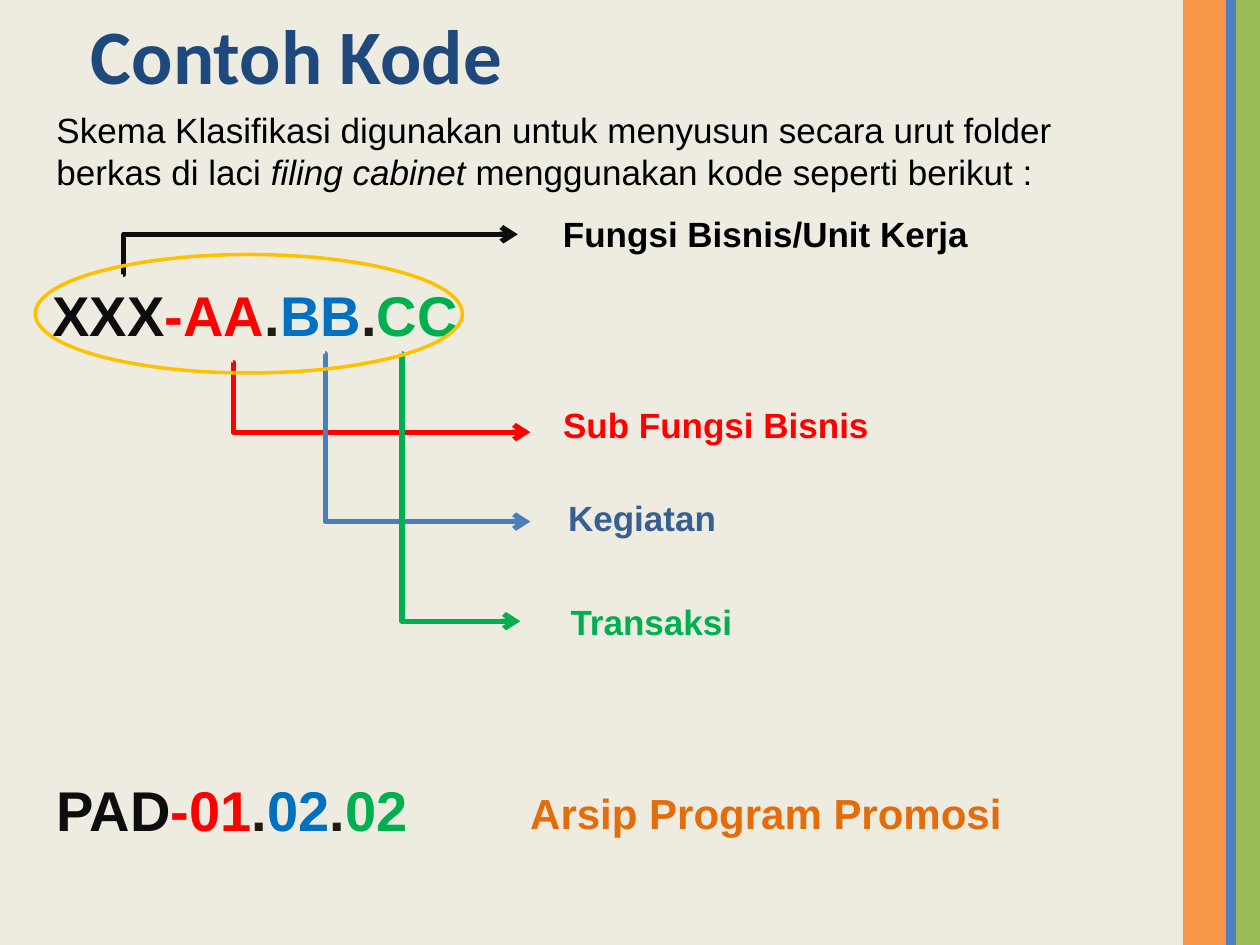
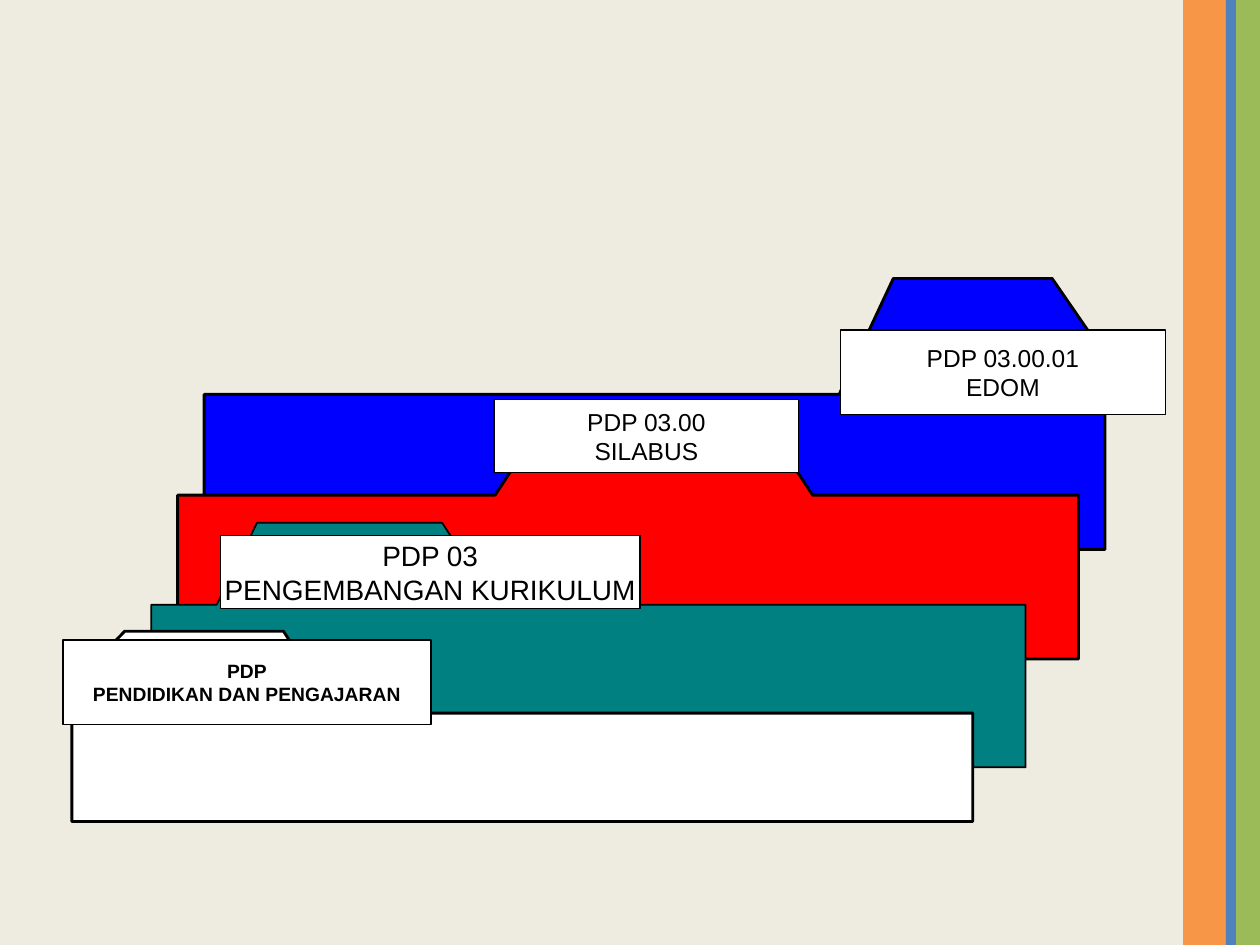
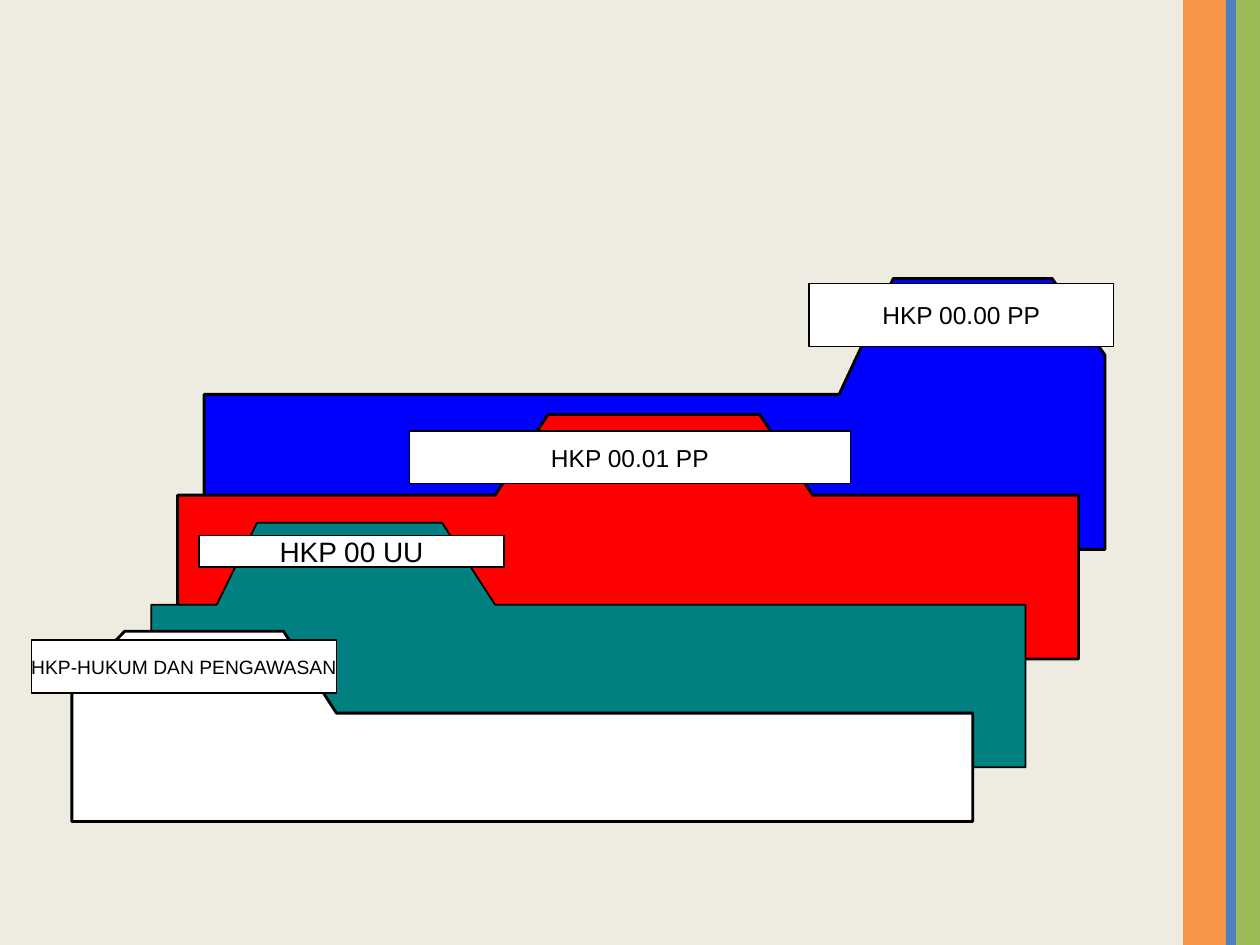
"""Build three slides that explain filing codes and folder order."""
from lxml import etree
from pptx import Presentation
from pptx.dml.color import RGBColor
from pptx.enum.shapes import MSO_CONNECTOR, MSO_SHAPE
from pptx.enum.text import MSO_ANCHOR, MSO_AUTO_SIZE, PP_ALIGN
from pptx.oxml.ns import qn
from pptx.util import Inches, Pt

RECTANGLE = MSO_SHAPE.RECTANGLE
OVAL = MSO_SHAPE.OVAL
ELBOW = MSO_CONNECTOR.ELBOW
TOP = MSO_ANCHOR.TOP
MIDDLE = MSO_ANCHOR.MIDDLE
LEFT = PP_ALIGN.LEFT
CENTER = PP_ALIGN.CENTER
FIT_SHAPE = MSO_AUTO_SIZE.SHAPE_TO_FIT_TEXT

COLORS = {
    "background": "EEECE1", "title": "1F497D", "text": "000000", "white": "FFFFFF",
    "orange band": "F79646", "blue band": "4F81BD", "green band": "9BBB59",
    "unit": "0D0D0D", "dot": "1E1C11", "function": "FF0000", "activity": "0070C0",
    "transaction": "00B050", "activity arrow": "4B7EBC", "activity label": "376092",
    "example": "E46C0A", "ring": "FFC000",
    "blue folder": "0000FF", "red folder": "FF0000", "teal folder": "008080",
}
BANDS = [("orange band", 9.39, 0.35), ("green band", 9.81, 0.19), ("blue band", 9.73, 0.08)]
CODE_PARTS = ["unit", "function", "dot", "activity", "dot", "transaction"]
FOLDERS = [
    ("blue folder", 1.63, [(8.77, 4.36), (1.62, 4.36), (1.62, 3.13), (6.66, 3.13),
                           (7.09, 2.21), (8.35, 2.21), (8.77, 2.82)]),
    ("red folder", 1.63, [(8.56, 5.23), (8.56, 3.93), (6.45, 3.93), (6.03, 3.29),
                          (4.35, 3.29), (3.93, 3.93), (1.41, 3.93), (1.41, 5.23)]),
    ("teal folder", 1, [(8.14, 6.09), (8.14, 4.8), (3.93, 4.8), (3.51, 4.15),
                        (2.04, 4.15), (1.72, 4.8), (1.2, 4.8), (1.2, 6.09)]),
    ("white", 1.63, [(0.57, 6.52), (7.72, 6.52), (7.72, 5.66), (2.67, 5.66),
                     (2.25, 5.01), (0.99, 5.01), (0.57, 5.44)]),
]


def rgb(name):
    """Return the named colour."""
    return RGBColor.from_string(COLORS[name])


class Deck:
    """Hold the shared style and the current slide."""

    def __init__(self):
        """Start an empty presentation."""
        self.presentation = Presentation()
        self.presentation.slide_width = Inches(10)
        self.presentation.slide_height = Inches(7.5)
        self.slide = None

    def new_slide(self):
        """Add a slide with its background and side bands."""
        self.slide = self.presentation.slides.add_slide(self.presentation.slide_layouts[6])
        fill = self.slide.background.fill
        fill.solid()
        fill.fore_color.rgb = rgb("background")
        for color, left, width in BANDS:
            self.shape(RECTANGLE, (left, 0, width, 7.5), color)

    def paint(self, shape, fill, line, width):
        """Set the fill and outline of a shape."""
        shape.shadow.inherit = False
        if fill:
            shape.fill.solid()
            shape.fill.fore_color.rgb = rgb(fill)
        else:
            shape.fill.background()
        if line:
            shape.line.color.rgb = rgb(line)
            shape.line.width = Pt(width)
        else:
            shape.line.fill.background()

    def shape(self, kind, box, fill=None, line=None, width=0.75):
        """Add a preset shape."""
        shape = self.slide.shapes.add_shape(kind, *map(Inches, box))
        self.paint(shape, fill, line, width)
        return shape

    def fill_text(self, frame, lines, size, color="text", bold=False, font="Arial",
                  align=LEFT, anchor=TOP, wrap=False):
        """Fill a text frame; a line is a string or a list of text and colour pairs."""
        frame.word_wrap = wrap
        frame.vertical_anchor = anchor
        for number, line in enumerate(lines):
            paragraph = frame.add_paragraph() if number else frame.paragraphs[0]
            paragraph.alignment = align
            for text, run_color in [(line, color)] if isinstance(line, str) else line:
                run = paragraph.add_run()
                run.text = text
                run.font.name = font
                run.font.size = Pt(size)
                run.font.bold = bold
                run.font.color.rgb = rgb(run_color)

    def text(self, box, lines, size, **style):
        """Add a text box and return its frame."""
        frame = self.slide.shapes.add_textbox(*map(Inches, box)).text_frame
        self.fill_text(frame, lines, size, **style)
        frame.auto_size = FIT_SHAPE
        return frame

    def title(self, text):
        """Add the slide title."""
        frame = self.slide.shapes.add_textbox(0, 0, Inches(4.71), Inches(0.85)).text_frame
        self.fill_text(frame, [text], 44, color="title", bold=True, font="Calibri",
                       align=CENTER, anchor=MIDDLE, wrap=True)

    def code(self, left, top, parts):
        """Add a filing code with one colour for each part."""
        self.text((left, top, 3.46, 0.64), [list(zip(parts, CODE_PARTS))], 32,
                  bold=True, wrap=True)

    def arrow(self, start, end, color):
        """Add an elbow arrow that leaves vertically and ends horizontally."""
        connector = self.slide.shapes.add_connector(ELBOW, *map(Inches, start + end))
        connector.line.color.rgb = rgb(color)
        connector.line.width = Pt(3)
        properties = connector._element.spPr
        guides = properties.find(qn("a:prstGeom")).get_or_add_avLst()
        etree.SubElement(guides, qn("a:gd"), name="adj1", fmla="val 100")
        line = properties.find(qn("a:ln"))
        etree.SubElement(line, qn("a:tailEnd"), type="arrow")
        etree.SubElement(properties, qn("a:effectLst"))

    def folder(self, color, width, points):
        """Add a tabbed folder outline."""
        corners = [(Inches(x), Inches(y)) for x, y in points]
        builder = self.slide.shapes.build_freeform(*corners[0])
        builder.add_line_segments(corners[1:])
        self.paint(builder.convert_to_shape(), color, "text", width)

    def label(self, box, lines, size, bold=False):
        """Add a white folder label."""
        shape = self.shape(RECTANGLE, box, "white", "text")
        self.fill_text(shape.text_frame, lines, size, bold=bold, align=CENTER, anchor=MIDDLE)

    def folder_slide(self, labels):
        """Add a slide with the stacked folders and their labels."""
        self.new_slide()
        for folder in FOLDERS:
            self.folder(*folder)
        for label in labels:
            self.label(*label)


def code_slide(deck):
    """Explain the parts of a filing code."""
    deck.new_slide()
    deck.title("Contoh Kode")
    deck.code(0.32, 2.18, ["XXX", "-AA", ".", "BB", ".", "CC"])
    for start, end, color in [
        ((1.85, 2.88), (4.21, 3.43), "function"),
        ((2.58, 2.81), (4.21, 4.14), "activity arrow"),
        ((3.19, 2.81), (4.13, 4.93), "transaction"),
        ((0.98, 2.18), (4.11, 1.86), "unit"),
    ]:
        deck.arrow(start, end, color)
    for box, text, size, color in [
        ((4.11, 6.2, 4.07, 0.5), "Arsip Program Promosi", 24, "example"),
        ((4.37, 3.15, 2.65, 0.44), "Sub Fungsi Bisnis", 20, "function"),
        ((4.41, 3.89, 1.39, 0.44), "Kegiatan", 20, "activity label"),
        ((4.43, 4.72, 1.5, 0.44), "Transaksi", 20, "transaction"),
        ((4.37, 1.64, 3.44, 0.44), "Fungsi Bisnis/Unit Kerja", 20, "text"),
    ]:
        deck.text(box, [text], size, color=color, bold=True)
    deck.shape(OVAL, (0.28, 2.02, 3.39, 0.94), line="ring", width=2)
    scheme = [(text, "text") for text in
              ("berkas di laci ", "filing cabinet", " menggunakan kode seperti berikut :")]
    intro = deck.text(
        (0.35, 0.81, 9.06, 0.77),
        ["Skema Klasifikasi digunakan untuk menyusun secara urut folder", scheme],
        20, anchor=MIDDLE, wrap=True)
    intro.paragraphs[1].runs[1].font.italic = True
    deck.code(0.35, 6.11, ["PAD", "-01", ".", "02", ".", "02"])


def main():
    """Build and save the presentation."""
    deck = Deck()
    code_slide(deck)
    deck.folder_slide([
        ((0.5, 5.08, 2.92, 0.67), ["PDP", "PENDIDIKAN DAN PENGAJARAN"], 11, True),
        ((1.75, 4.25, 3.33, 0.58), ["PDP 03", "PENGEMBANGAN KURIKULUM"], 16),
        ((3.92, 3.17, 2.42, 0.58), ["PDP 03.00", "SILABUS"], 14),
        ((6.67, 2.62, 2.58, 0.67), ["PDP 03.00.01", "EDOM"], 14),
    ])
    deck.folder_slide([
        ((0.25, 5.08, 2.42, 0.42), ["HKP-HUKUM DAN PENGAWASAN"], 11),
        ((1.58, 4.25, 2.42, 0.25), ["HKP 00 UU"], 16),
        ((3.25, 3.42, 3.5, 0.42), ["HKP 00.01 PP"], 14),
        ((6.42, 2.25, 2.42, 0.5), ["HKP 00.00 PP"], 14),
    ])
    deck.presentation.save("out.pptx")


if __name__ == "__main__":
    main()
